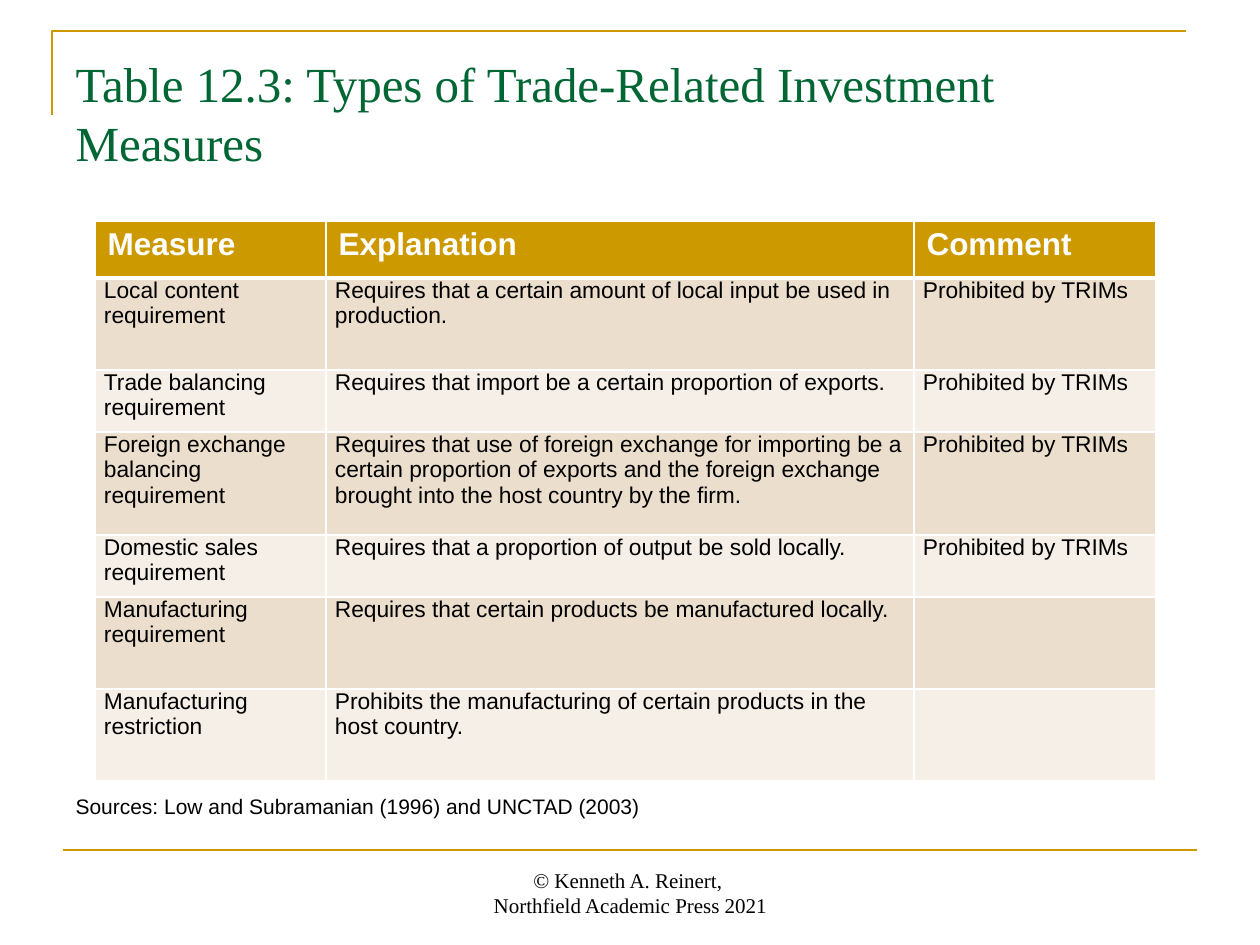
from dataclasses import dataclass

from lxml.etree import SubElement
from pptx import Presentation
from pptx.dml.color import RGBColor
from pptx.enum.shapes import MSO_CONNECTOR
from pptx.enum.text import MSO_ANCHOR as Anchor, MSO_AUTO_SIZE as AutoSize, PP_ALIGN as Align
from pptx.oxml.ns import qn
from pptx.util import Emu, Pt

SCALE = 914400 / 126
GOLD, GREEN, WHITE, BLACK = "CC9900", "006633", "FFFFFF", "000000"
BANDS = ("ECDECC", "F6EFE7")
SERIF, SANS = "Times New Roman", "Arial"
COLUMNS = (231, 588, 242)
HEADINGS = ("Measure", "Explanation", "Comment")
PROHIBITED = "Prohibited by TRIMs"


@dataclass
class Measure:
    """One row of the table with its height in px."""
    height: int
    name: str
    explanation: str
    comment: str = ""


MEASURES = (
    Measure(92, "Local content requirement",
            "Requires that a certain amount of local input be used in production.", PROHIBITED),
    Measure(62, "Trade balancing requirement",
            "Requires that import be a certain proportion of exports.", PROHIBITED),
    Measure(103, "Foreign exchange balancing requirement",
            "Requires that use of foreign exchange for importing be a certain proportion of exports "
            "and the foreign exchange brought into the host country by the firm.", PROHIBITED),
    Measure(62, "Domestic sales requirement",
            "Requires that a proportion of output be sold locally.", PROHIBITED),
    Measure(92, "Manufacturing requirement",
            "Requires that certain products be manufactured locally."),
    Measure(92, "Manufacturing restriction",
            "Prohibits the manufacturing of certain products in the host country."),
)


def px(n: int) -> Emu:
    """Turn px into EMU."""
    return Emu(round(n * SCALE))


def rgb(color: str) -> RGBColor:
    """Turn a hex string into a colour."""
    return RGBColor.from_string(color)


def write(tf, text: str, size: int, font: str, color: str, align=Align.LEFT, bold=False) -> None:
    """Fill a text frame and format every run."""
    tf.text = text
    for p in tf.paragraphs:
        p.alignment = align
        for r in p.runs:
            r.font.size, r.font.name, r.font.bold = Pt(size), font, bold
            r.font.color.rgb = rgb(color)


def place(sp, left: int, top: int, width: int, height: int, anchor):
    """Move a text shape and return its wrapped text frame."""
    sp.left, sp.top, sp.width, sp.height = map(px, (left, top, width, height))
    tf = sp.text_frame
    tf.word_wrap, tf.auto_size, tf.vertical_anchor = True, AutoSize.NONE, anchor
    return tf


def stroke(line) -> None:
    """Give a line the gold rule style."""
    line.color.rgb = rgb(GOLD)
    line.width = Pt(1.5)


def add_rules(s) -> None:
    """Draw the corner rule at the top and the rule above the footer."""
    builder = s.shapes.build_freeform(52, 115, scale=SCALE)
    builder.add_line_segments([(52, 31), (1186, 31)], close=False)
    corner = builder.convert_to_shape()
    corner.shadow.inherit = False
    corner.fill.background()
    stroke(corner.line)
    rule = s.shapes.add_connector(MSO_CONNECTOR.STRAIGHT, px(63), px(850), px(1197), px(850))
    stroke(rule.line)
    SubElement(rule._element.spPr, qn("a:effectLst"))


def style_cell(cell, fill: str, top: int, bottom: int) -> None:
    """Set white borders, in points, and then the fill of a cell."""
    tc_pr = cell._tc.get_or_add_tcPr()
    for side, width in (("L", 1), ("R", 1), ("T", top), ("B", bottom)):
        ln = SubElement(tc_pr, qn(f"a:ln{side}"), w=str(Pt(width)))
        SubElement(SubElement(ln, qn("a:solidFill")), qn("a:srgbClr"), val=WHITE)
    cell.fill.solid()
    cell.fill.fore_color.rgb = rgb(fill)


def add_measures(s) -> None:
    """Draw the table of measures."""
    heights = [57] + [m.height for m in MEASURES]
    table = s.shapes.add_table(len(heights), len(COLUMNS), px(95), px(221),
                               px(sum(COLUMNS)), px(sum(heights))).table
    for column, width in zip(table.columns, COLUMNS):
        column.width = px(width)
    for row, height in zip(table.rows, heights):
        row.height = px(height)
    for cell, heading in zip(table.rows[0].cells, HEADINGS):
        style_cell(cell, GOLD, 1, 3)
        write(cell.text_frame, heading, 18, SANS, WHITE, bold=True)
    for i, m in enumerate(MEASURES):
        for cell, text in zip(table.rows[i + 1].cells, (m.name, m.explanation, m.comment)):
            style_cell(cell, BANDS[i % 2], 1 if i else 3, 1)
            cell.margin_left = cell.margin_right = px(9)
            cell.margin_top = cell.margin_bottom = 0
            write(cell.text_frame, text, 13, SANS, BLACK)


def main() -> None:
    """Build and save the slide."""
    prs = Presentation()
    prs.slide_width, prs.slide_height = px(1260), px(945)
    s = prs.slides.add_slide(prs.slide_layouts[1])
    add_rules(s)

    tf = place(s.shapes.title, 63, 47, 1134, 130, Anchor.TOP)
    write(tf, "Table 12.3: Types of Trade-Related Investment Measures", 28, SERIF, GREEN)
    tf.paragraphs[0].line_spacing = 1.0

    tf = place(s.placeholders[1], 63, 787, 1134, 44, Anchor.TOP)
    write(tf, "Sources: Low and Subramanian (1996) and UNCTAD (2003)", 12, SANS, BLACK)
    p = tf.paragraphs[0]
    p.space_before = Pt(0)
    p_pr = p._p.get_or_add_pPr()
    p_pr.set("marL", "0")
    p_pr.set("indent", "0")
    SubElement(p_pr, qn("a:buNone"))

    footer = s.shapes.add_textbox(0, 0, 0, 0)
    tf = place(footer, 431, 861, 399, 63, Anchor.BOTTOM)
    write(tf, "© Kenneth A. Reinert, \nNorthfield Academic Press 2021", 12, SERIF, BLACK, Align.CENTER)

    add_measures(s)
    prs.save("out.pptx")


if __name__ == "__main__":
    main()
